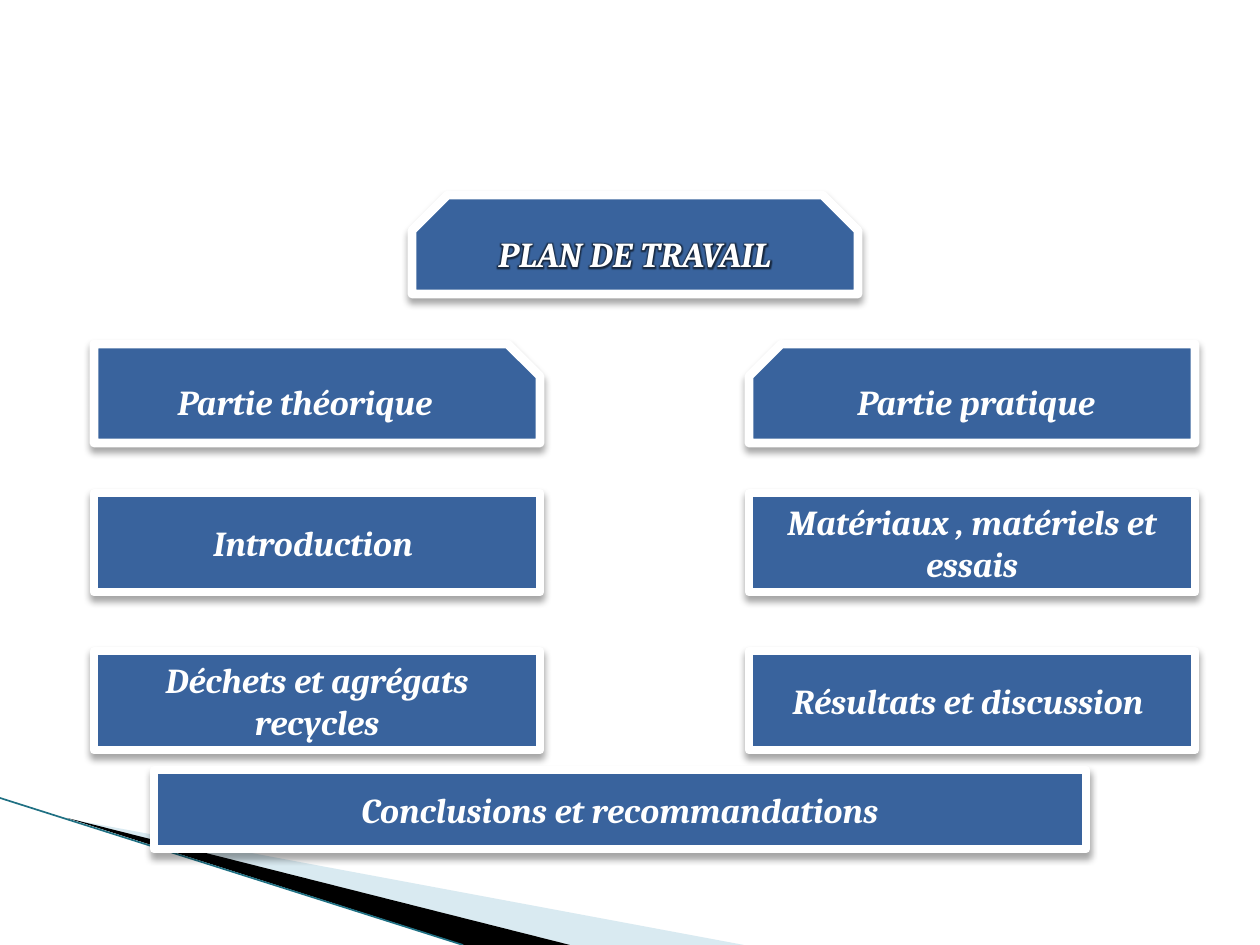
from lxml import etree
from pptx import Presentation
from pptx.dml.color import RGBColor
from pptx.enum.shapes import MSO_CONNECTOR, MSO_SHAPE
from pptx.enum.text import MSO_ANCHOR, PP_ALIGN
from pptx.oxml import parse_xml
from pptx.oxml.ns import nsdecls, qn
from pptx.util import Emu, Pt

PX = 914400 / 126
BOX_WIDTH, BOX_HEIGHT = 446, 99
LEFT, RIGHT = 94, 749
SNIP = 0.327


def px(length):
    return Emu(round(length * PX))


def color(value):
    return RGBColor.from_string(value)


def effect_list(effect=""):
    return parse_xml(f'<a:effectLst {nsdecls("a")}>{effect}</a:effectLst>')


class Slide:
    font, size = "Cambria", 20
    box_fill, white = "39639D", "FFFFFF"
    shadow = (
        '<a:outerShdw blurRad="50800" dist="38100" dir="5400000" rotWithShape="0">'
        '<a:srgbClr val="000000"><a:alpha val="35000"/></a:srgbClr></a:outerShdw>'
    )
    glow = (
        '<a:glow rad="45000"><a:srgbClr val="000000">'
        '<a:alpha val="60000"/></a:srgbClr></a:glow>'
    )

    def __init__(self, page):
        self.page = page

    def label(self, shape, text):
        """Fill a shape with centred text and return its only run."""
        frame = shape.text_frame
        frame.text = text
        frame.word_wrap = True
        frame.vertical_anchor = MSO_ANCHOR.MIDDLE
        para = frame.paragraphs[0]
        para.alignment = PP_ALIGN.CENTER
        span = para.runs[0]
        span.font.name = self.font
        span.font.size = Pt(self.size)
        span.font.bold = span.font.italic = True
        span.font.color.rgb = color(self.white)
        return span

    def box(self, x, y, width, height, text="", kind=MSO_SHAPE.RECTANGLE,
            snips=(), mirrored=False):
        box = self.page.shapes.add_shape(kind, px(x), px(y), px(width), px(height))
        for index, snip in enumerate(snips):
            box.adjustments[index] = snip
        if mirrored:
            box.element.spPr.find(qn("a:xfrm")).set("flipH", "1")
        box.fill.solid()
        box.fill.fore_color.rgb = color(self.box_fill)
        box.line.color.rgb = color(self.white)
        box.line.width = Pt(5)
        etree.SubElement(box.element.spPr.find(qn("a:ln")), qn("a:round"))
        box.element.spPr.append(effect_list(self.shadow))
        if text:
            self.label(box, text)

    def title(self, x, y, width, height, text):
        """Place the title in front of the shapes drawn so far, with a dark glow."""
        title = self.page.shapes.title
        title.left, title.top = px(x), px(y)
        title.width, title.height = px(width), px(height)
        self.label(title, text)
        fill = title.element.find(".//" + qn("a:rPr")).find(qn("a:solidFill"))
        fill.addnext(effect_list(self.glow))
        title.element.getparent().append(title.element)

    def wedge(self, points, fill, opacity=100):
        builder = self.page.shapes.build_freeform(*points[0], scale=PX)
        builder.add_line_segments(points[1:], close=True)
        wedge = builder.convert_to_shape()
        wedge.shadow.inherit = False
        wedge.fill.solid()
        wedge.fill.fore_color.rgb = color(fill)
        wedge.line.fill.background()
        tone = wedge.element.spPr.find(qn("a:solidFill"))[0]
        etree.SubElement(tone, qn("a:alpha")).set("val", str(opacity * 1000))

    def line(self, start, end, stroke, width):
        line = self.page.shapes.add_connector(
            MSO_CONNECTOR.STRAIGHT, *map(px, start + end))
        line.line.color.rgb = color(stroke)
        line.line.width = Pt(width)
        line.element.spPr.append(effect_list())


def main():
    deck = Presentation()
    deck.slide_width, deck.slide_height = px(1260), px(945)
    slide = Slide(deck.slides.add_slide(deck.slide_layouts[5]))

    slide.wedge([(69, 819), (744, 945), (570, 945)], "A0CBDC", 40)
    slide.wedge([(67, 818), (570, 945), (464, 945)], "000000")
    slide.line((0, 798), (463, 945), "1F7083", 0.95)

    slide.box(412, 195, BOX_WIDTH, BOX_HEIGHT,
              kind=MSO_SHAPE.SNIP_2_SAME_RECTANGLE, snips=(0.359, 0))
    columns = [
        (LEFT, False, "Partie théorique ",
         ["Introduction ", "Déchets et agrégats recycles"]),
        (RIGHT, True, "Partie pratique ",
         ["Matériaux , matériels et essais", "Résultats et discussion "]),
    ]
    for x, mirrored, heading, chapters in columns:
        slide.box(x, 344, BOX_WIDTH, BOX_HEIGHT, heading,
                  MSO_SHAPE.SNIP_1_RECTANGLE, (SNIP,), mirrored)
        for y, chapter in zip((493, 651), chapters):
            slide.box(x, y, BOX_WIDTH, BOX_HEIGHT, chapter, mirrored=mirrored)
    slide.box(154, 770, 932, 79, "Conclusions et recommandations")
    slide.title(412, 213, BOX_WIDTH, 81, "PLAN DE TRAVAIL")

    deck.save("out.pptx")


if __name__ == "__main__":
    main()
